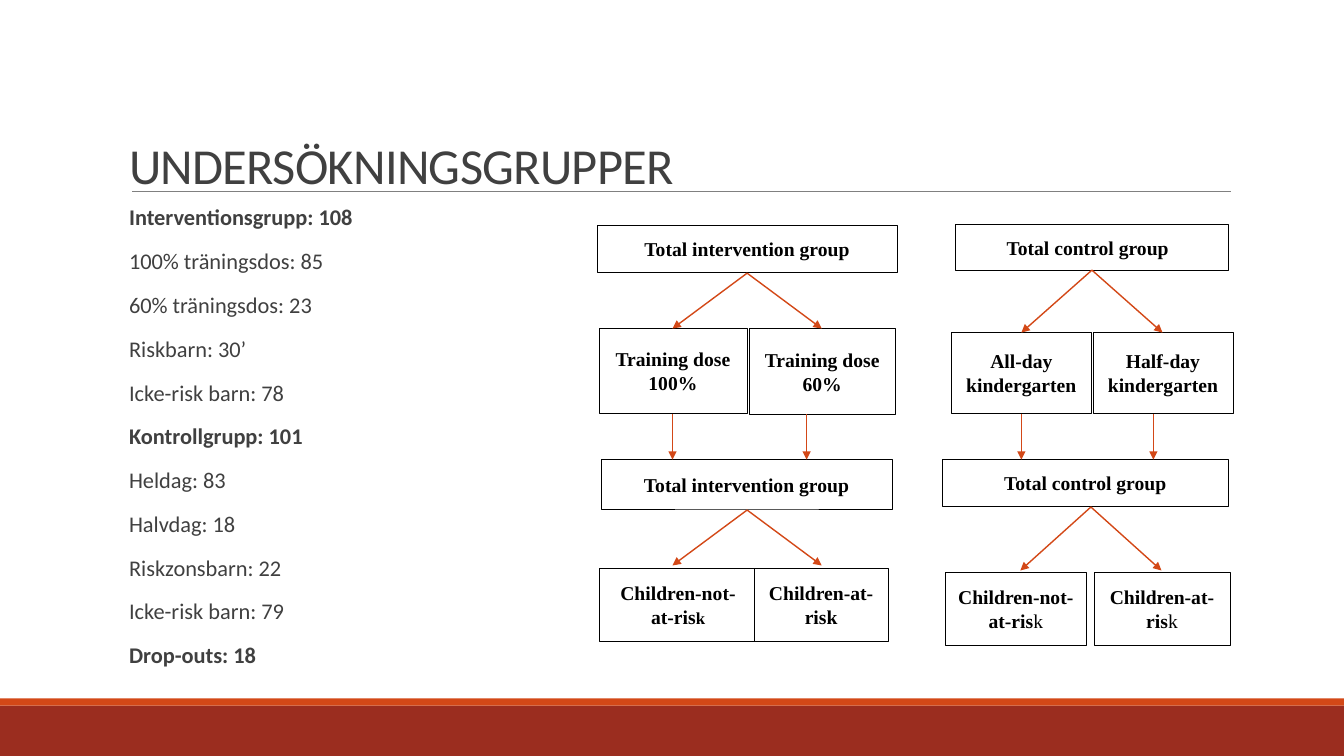
import pptx
import pptx.dml.color
import pptx.enum.shapes
import pptx.enum.text
import pptx.oxml
import pptx.oxml.ns
import pptx.util
from pptx.util import Inches, Pt

ORANGE, BRICK, DARK, GREY = "D34817", "9B2D1F", "404040", "808080"
BLACK, WHITE = "000000", "FFFFFF"
LIGHT, SMALL = {"bold": False}, {"size": 12}

TITLE = "UNDERSÖKNINGSGRUPPER"
GROUP_SIZES = [
    ("Interventionsgrupp: 108", True),
    ("100% träningsdos: 85", False),
    ("60% träningsdos: 23", False),
    ("Riskbarn: 30’", False),
    ("Icke-risk barn: 78", False),
    ("Kontrollgrupp: 101", True),
    ("Heldag: 83", False),
    ("Halvdag: 18", False),
    ("Riskzonsbarn: 22", False),
    ("Icke-risk barn: 79", False),
    ("Drop-outs: 18", True),
]

# (left, top, width, height), then paragraphs, each a list of (text, format) runs
BOXES = [
    ((5.92, 2.24, 2.98, 0.46), [[("Total intervention group", {})]]),
    ((9.48, 2.23, 2.7, 0.45), [[("Total control group ", {}), ("\u00a0", {"size": 10, "bold": False})]]),
    ((5.94, 3.26, 1.47, 0.84), [[("Training dose", {})], [("100%", {})]]),
    ((7.43, 3.26, 1.45, 0.85), [[("Training dose", {})], [("60%", {})]]),
    ((9.44, 3.3, 1.38, 0.8), [[("All-day kindergarten", {})]]),
    ((10.84, 3.3, 1.39, 0.8), [[("Half-day kindergarten", {})]]),
    ((5.96, 4.56, 2.89, 0.49), [[("Total intervention group", {})]]),
    ((9.35, 4.56, 2.83, 0.46), [[("Total control group", {})]]),
    ((5.94, 5.64, 1.57, 0.72), [[("Children-not-", {})], [("at-ris", {}), ("k", SMALL)]]),
    ((7.48, 5.64, 1.33, 0.72), [[("Children-at-", {})], [("risk", {})]]),
    ((9.38, 5.68, 1.39, 0.72), [[("Children-not-at-ris", {}), ("k", LIGHT)]]),
    ((10.85, 5.68, 1.35, 0.72), [[("Children-at-", {})], [("ris", {}), ("k", LIGHT)]]),
]

# Splits: apex x, apex y, half spread, end y
SPLITS = [
    (7.41, 2.71, 0.74, 3.26),
    (10.83, 2.68, 0.7, 3.3),
    (7.41, 5.06, 0.74, 5.61),
    (10.82, 5.03, 0.7, 5.66),
]
MERGE_XS = [6.67, 8, 10.13, 11.44]
MERGE_TOP, MERGE_BOTTOM = 4.11, 4.56


def color(hex_string):
    return pptx.dml.color.RGBColor.from_string(hex_string)


def add_run(paragraph, text, font="Times New Roman", size=14, bold=True, fill=BLACK):
    run = paragraph.add_run()
    run.text = text
    run.font.name = font
    run.font.size = Pt(size)
    run.font.bold = bold
    run.font.color.rgb = color(fill)
    return run


def add_xml(parent, tag, **attributes):
    element = pptx.oxml.parse_xml(f"<a:{tag} {pptx.oxml.ns.nsdecls('a')}/>")
    for name, value in attributes.items():
        element.set(name, value)
    parent.append(element)
    return element


def place(shape, left, top, width, height):
    shape.left, shape.top = Inches(left), Inches(top)
    shape.width, shape.height = Inches(width), Inches(height)


def add_rectangle(slide, bounds, fill, outline=None):
    shape = slide.shapes.add_shape(
        pptx.enum.shapes.MSO_SHAPE.RECTANGLE, *map(Inches, bounds))
    shape.shadow.inherit = False
    shape.fill.solid()
    shape.fill.fore_color.rgb = color(fill)
    if outline:
        shape.line.color.rgb = color(outline)
        shape.line.width = Pt(0.5)
    else:
        shape.line.fill.background()
    return shape


def add_line(slide, start, end, stroke=ORANGE, width=1, arrow=True):
    line = slide.shapes.add_connector(
        pptx.enum.shapes.MSO_CONNECTOR.STRAIGHT, *map(Inches, (*start, *end)))
    line.line.color.rgb = color(stroke)
    line.line.width = Pt(width)
    if arrow:
        add_xml(line.line._get_or_add_ln(), "tailEnd", type="triangle")
    add_xml(line._element.spPr, "effectLst")


def add_title(slide):
    title = slide.shapes.title
    place(title, 1.18, 0.56, 12.06, 1.42)
    frame = title.text_frame
    frame.auto_size = pptx.enum.text.MSO_AUTO_SIZE.NONE
    frame.vertical_anchor = pptx.enum.text.MSO_ANCHOR.BOTTOM
    paragraph = frame.paragraphs[0]
    paragraph.alignment = pptx.enum.text.PP_ALIGN.LEFT
    paragraph.line_spacing = 0.85
    run = add_run(paragraph, TITLE, font="Calibri", size=36, bold=False, fill=DARK)
    run.font._element.set("spc", "-50")


def add_group_sizes(slide):
    body = slide.placeholders[1]
    place(body, 1.18, 2, 11.05, 4.83)
    frame = body.text_frame
    frame.auto_size = pptx.enum.text.MSO_AUTO_SIZE.NONE
    frame.margin_left = frame.margin_right = 0
    for index, (text, bold) in enumerate(GROUP_SIZES):
        paragraph = frame.add_paragraph() if index else frame.paragraphs[0]
        paragraph.line_spacing = 0.9
        paragraph.space_before, paragraph.space_after = Pt(12), Pt(2)
        properties = paragraph._p.get_or_add_pPr()
        properties.set("marL", str(Inches(0.1)))
        properties.set("indent", str(-Inches(0.1)))
        add_xml(properties, "buChar", char=" ")
        add_run(paragraph, text, font="Calibri", size=16, bold=bold, fill=DARK)


def add_box(slide, bounds, paragraphs):
    frame = add_rectangle(slide, bounds, WHITE, BLACK).text_frame
    frame.word_wrap = True
    frame.vertical_anchor = pptx.enum.text.MSO_ANCHOR.MIDDLE
    for index, runs in enumerate(paragraphs):
        paragraph = frame.add_paragraph() if index else frame.paragraphs[0]
        paragraph.alignment = pptx.enum.text.PP_ALIGN.CENTER
        for text, text_format in runs:
            add_run(paragraph, text, **text_format)


def main():
    presentation = pptx.Presentation()
    presentation.slide_width, presentation.slide_height = Inches(13.33), Inches(7.5)
    slide = presentation.slides.add_slide(
        presentation.slide_layouts.get_by_name("Title and Content"))

    add_rectangle(slide, (0, 7, 13.33, 0.5), BRICK)
    add_rectangle(slide, (0, 6.93, 13.33, 0.07), ORANGE)
    add_line(slide, (1.31, 1.9), (12.21, 1.9), stroke=GREY, width=0.5, arrow=False)
    add_title(slide)
    add_group_sizes(slide)

    for bounds, paragraphs in BOXES:
        add_box(slide, bounds, paragraphs)
    for apex_x, apex_y, spread, end_y in SPLITS:
        for end_x in (apex_x - spread, apex_x + spread):
            add_line(slide, (apex_x, apex_y), (end_x, end_y))
    for x in MERGE_XS:
        add_line(slide, (x, MERGE_TOP), (x, MERGE_BOTTOM))

    presentation.save("out.pptx")


if __name__ == "__main__":
    main()
